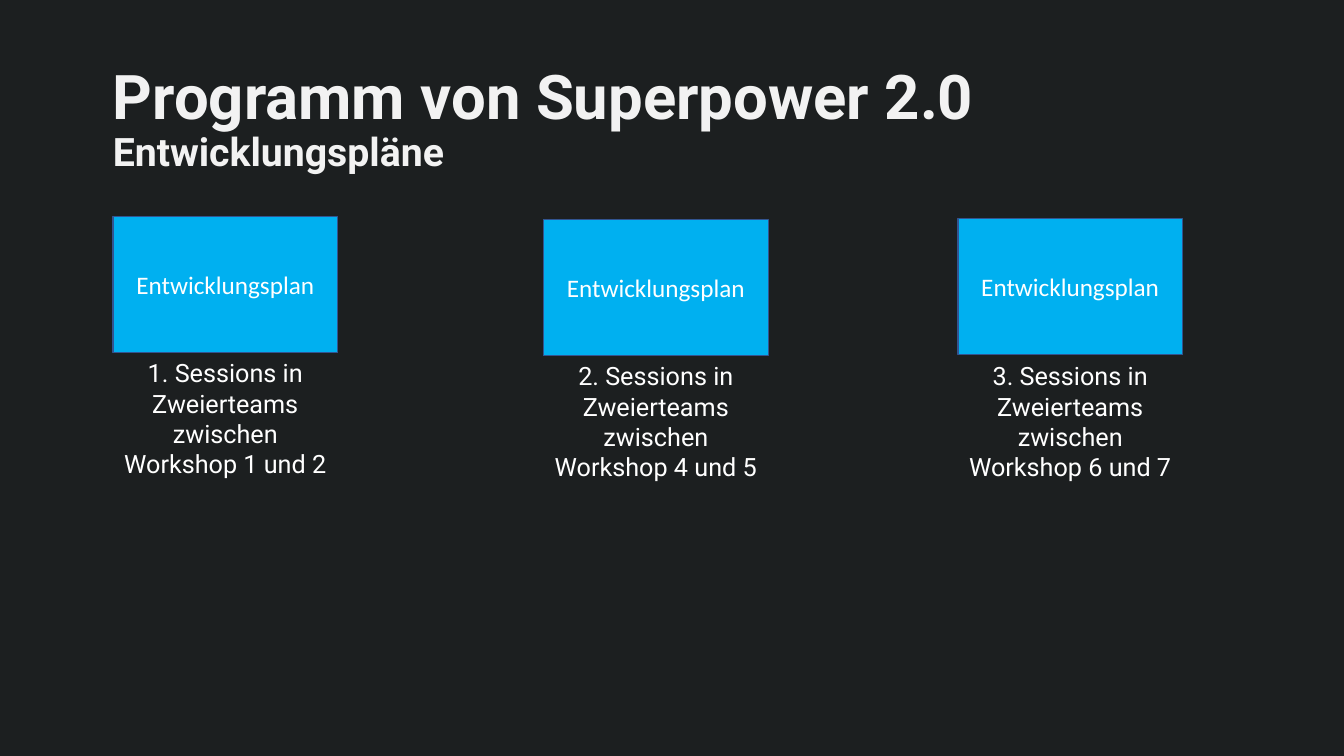
from dataclasses import dataclass

from pptx import Presentation
from pptx.dml.color import RGBColor
from pptx.enum.shapes import MSO_SHAPE
from pptx.enum.text import MSO_ANCHOR, PP_ALIGN
from pptx.util import Inches, Pt

RECTANGLE = MSO_SHAPE.RECTANGLE
BOTTOM, MIDDLE = MSO_ANCHOR.BOTTOM, MSO_ANCHOR.MIDDLE
CENTER = PP_ALIGN.CENTER


@dataclass(frozen=True)
class Theme:
    background: RGBColor = RGBColor.from_string("1C1F20")
    heading: RGBColor = RGBColor.from_string("F2F2F2")
    text: RGBColor = RGBColor.from_string("FFFFFF")
    card: RGBColor = RGBColor.from_string("00B0F0")
    card_line: RGBColor = RGBColor.from_string("325491")
    text_font: str = "Roboto"
    card_font: str = "Calibri"
    title_size: int = 44
    subtitle_size: int = 28
    body_size: int = 18


theme = Theme()


def style(paragraph, name, size, color, bold=False):
    font = paragraph.font
    font.name = name
    font.size = Pt(size)
    font.color.rgb = color
    font.bold = bold


deck = Presentation()
deck.slide_width, deck.slide_height = Inches(13.33), Inches(7.5)
page = deck.slides.add_slide(deck.slide_layouts[6])
page.background.fill.solid()
page.background.fill.fore_color.rgb = theme.background

# Title and subtitle
title_box = page.shapes.add_textbox(Inches(1.12), Inches(0.06), Inches(11.04), Inches(1.68))
frame = title_box.text_frame
frame.word_wrap = True
frame.vertical_anchor = BOTTOM
frame.margin_left = frame.margin_right = frame.margin_top = frame.margin_bottom = 0
frame.text = "Programm von Superpower 2.0\nEntwicklungspläne"
for para, size in zip(frame.paragraphs, (theme.title_size, theme.subtitle_size)):
    para.line_spacing = 0.9
    style(para, theme.text_font, size, theme.heading, bold=True)

# Development plans: left, card top, caption top, workshops before and after
plans = [
    (1.12, 2.15, 3.5, 1, 2),
    (5.39, 2.18, 3.53, 4, 5),
    (9.5, 2.17, 3.53, 6, 7),
]
width = Inches(2.23)
for number, (left, card_top, caption_top, before, after) in enumerate(plans, start=1):
    card = page.shapes.add_shape(RECTANGLE, Inches(left), Inches(card_top), width, Inches(1.35))
    card.shadow.inherit = False
    card.fill.solid()
    card.fill.fore_color.rgb = theme.card
    card.line.color.rgb = theme.card_line
    card.line.width = Pt(1)
    card.text_frame.vertical_anchor = MIDDLE
    card.text_frame.text = "Entwicklungsplan"
    style(card.text_frame.paragraphs[0], theme.card_font, theme.body_size, theme.text)

    caption = page.shapes.add_textbox(Inches(left), Inches(caption_top), width, Inches(1.62))
    caption.text_frame.text = (
        f"{number}. Sessions in Zweierteams zwischen Workshop {before} und {after}"
    )
    style(caption.text_frame.paragraphs[0], theme.text_font, theme.body_size, theme.text)

    for box in (card, caption):
        box.text_frame.word_wrap = True
        box.text_frame.paragraphs[0].alignment = CENTER

deck.save("out.pptx")
